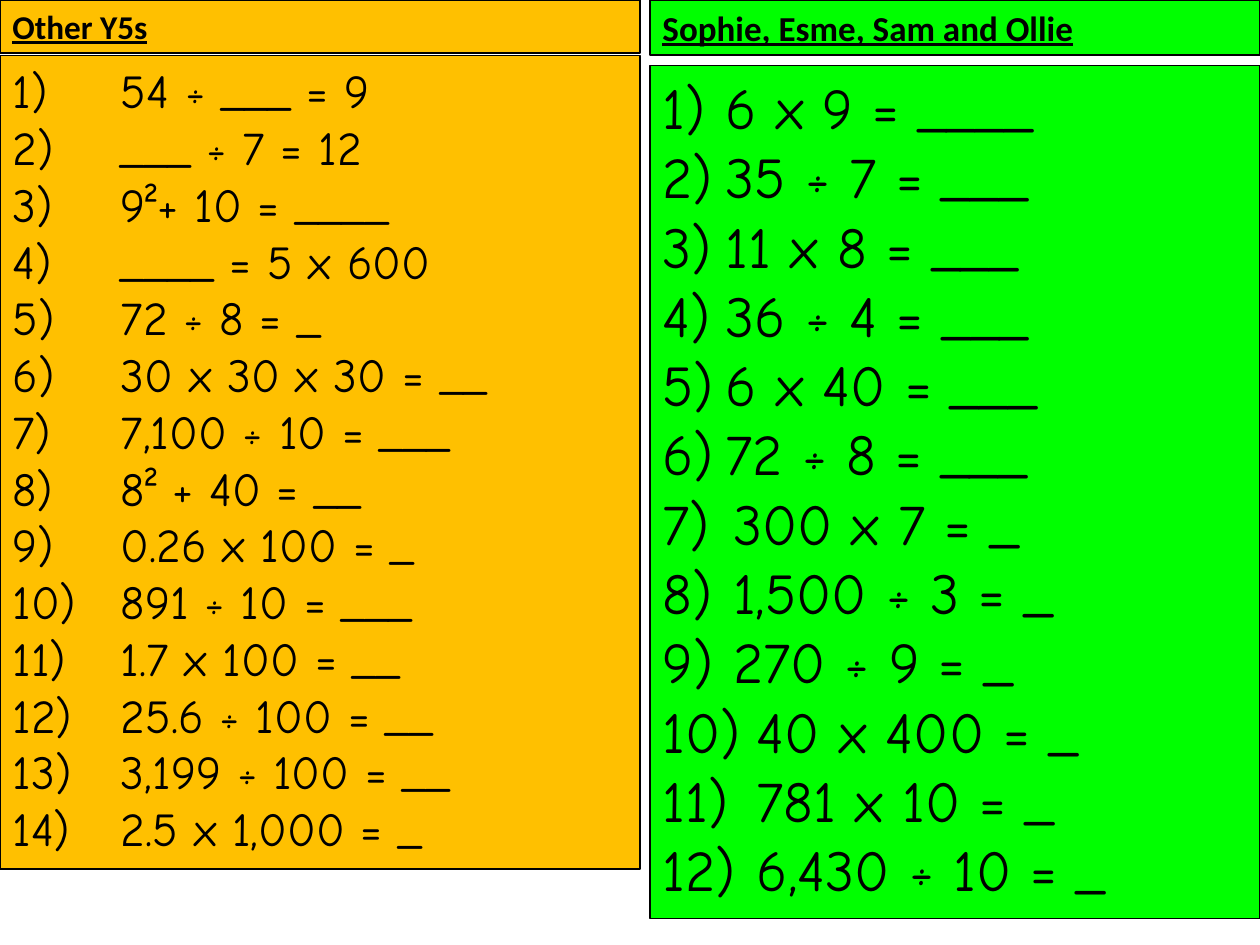
from lxml import etree
from pptx import Presentation
from pptx.dml.color import RGBColor
from pptx.enum.shapes import MSO_SHAPE as Shape
from pptx.enum.text import MSO_ANCHOR as Anchor, MSO_AUTO_SIZE as AutoSize, PP_ALIGN as Align
from pptx.oxml.ns import qn
from pptx.util import Inches, Pt

BLACK, AMBER, GREEN = "000000", "FFC000", "00FF00"

OTHER_QUESTIONS = [
    "54 ÷ ___ = 9", "___ ÷ 7 = 12", "9²+ 10 = ____", "____ = 5 x 600",
    "72 ÷ 8 = _", "30 x 30 x 30 = __", "7,100 ÷ 10 = ___", "8² + 40 = __",
    "0.26 x 100 = _", "891 ÷ 10 = ___", "1.7 x 100 = __", "25.6 ÷ 100 = __",
    "3,199 ÷ 100 = __", "2.5 x 1,000 = _",
]
GROUP_QUESTIONS = [
    "6 x 9 = ____", "35 ÷ 7 = ___", "11 x 8 = ___", "36 ÷ 4 = ___",
    "6 x 40 = ___", "72 ÷ 8 = ___", "300 x 7 = _", "1,500 ÷ 3 = _",
    "270 ÷ 9 = _", "40 x 400 = _", "781 x 10 = _", "6,430 ÷ 10 = _",
]


def colour(value):
    return RGBColor.from_string(value)


def add_panel(page, left, top, width, height, fill):
    box = page.shapes.add_shape(
        Shape.RECTANGLE, Inches(left), Inches(top), Inches(width), Inches(height))
    box.shadow.inherit = False
    box.fill.solid()
    box.fill.fore_color.rgb = colour(fill)
    box.line.color.rgb = colour(BLACK)
    box.line.width = Pt(1)
    frame = box.text_frame
    frame.word_wrap = True
    frame.auto_size = AutoSize.SHAPE_TO_FIT_TEXT
    frame.vertical_anchor = Anchor.TOP
    return box


def style_text(para, font, size, bold=False):
    para.alignment = Align.LEFT
    for span in para.runs:
        span.font.name = font
        span.font.size = Pt(size)
        span.font.bold = bold
        span.font.underline = bold
        span.font.color.rgb = colour(BLACK)


def number_paragraph(para, indent, start):
    props = para._p.get_or_add_pPr()
    props.set("marL", str(Inches(indent)))
    props.set("indent", str(-Inches(indent)))
    etree.SubElement(props, qn("a:buFont"), typeface="+mj-lt")
    number = etree.SubElement(props, qn("a:buAutoNum"), type="arabicParenR")
    if start > 1:
        number.set("startAt", str(start))


def add_heading(page, left, top, width, height, fill, text, size):
    box = add_panel(page, left, top, width, height, fill)
    box.text_frame.text = text
    style_text(box.text_frame.paragraphs[0], "Calibri", size, bold=True)


def add_questions(page, left, top, width, height, fill, questions, size, groups):
    frame = add_panel(page, left, top, width, height, fill).text_frame
    frame.text = "\n".join(questions)
    layout = [(indent, start) for count, indent, start in groups for _ in range(count)]
    for para, (indent, start) in zip(frame.paragraphs, layout):
        number_paragraph(para, indent, start)
        style_text(para, "Comic Neue", size)


def main():
    deck = Presentation()
    deck.slide_width, deck.slide_height = Inches(10), Inches(7.5)
    page = deck.slides.add_slide(deck.slide_layouts[6])
    add_heading(page, 0, 0, 5.08, 0.42, AMBER, "Other Y5s", 19)
    add_heading(page, 5.16, 0, 4.84, 0.44, GREEN, "Sophie, Esme, Sam and Ollie", 20)
    add_questions(page, 0, 0.44, 5.08, 6.46, AMBER, OTHER_QUESTIONS, 27, [(14, 0.86, 1)])
    add_questions(page, 5.16, 0.52, 4.84, 6.77, GREEN, GROUP_QUESTIONS, 33,
                  [(6, 0.5, 1), (3, 0.56, 7), (3, 0.75, 7)])
    deck.save("out.pptx")


if __name__ == "__main__":
    main()
